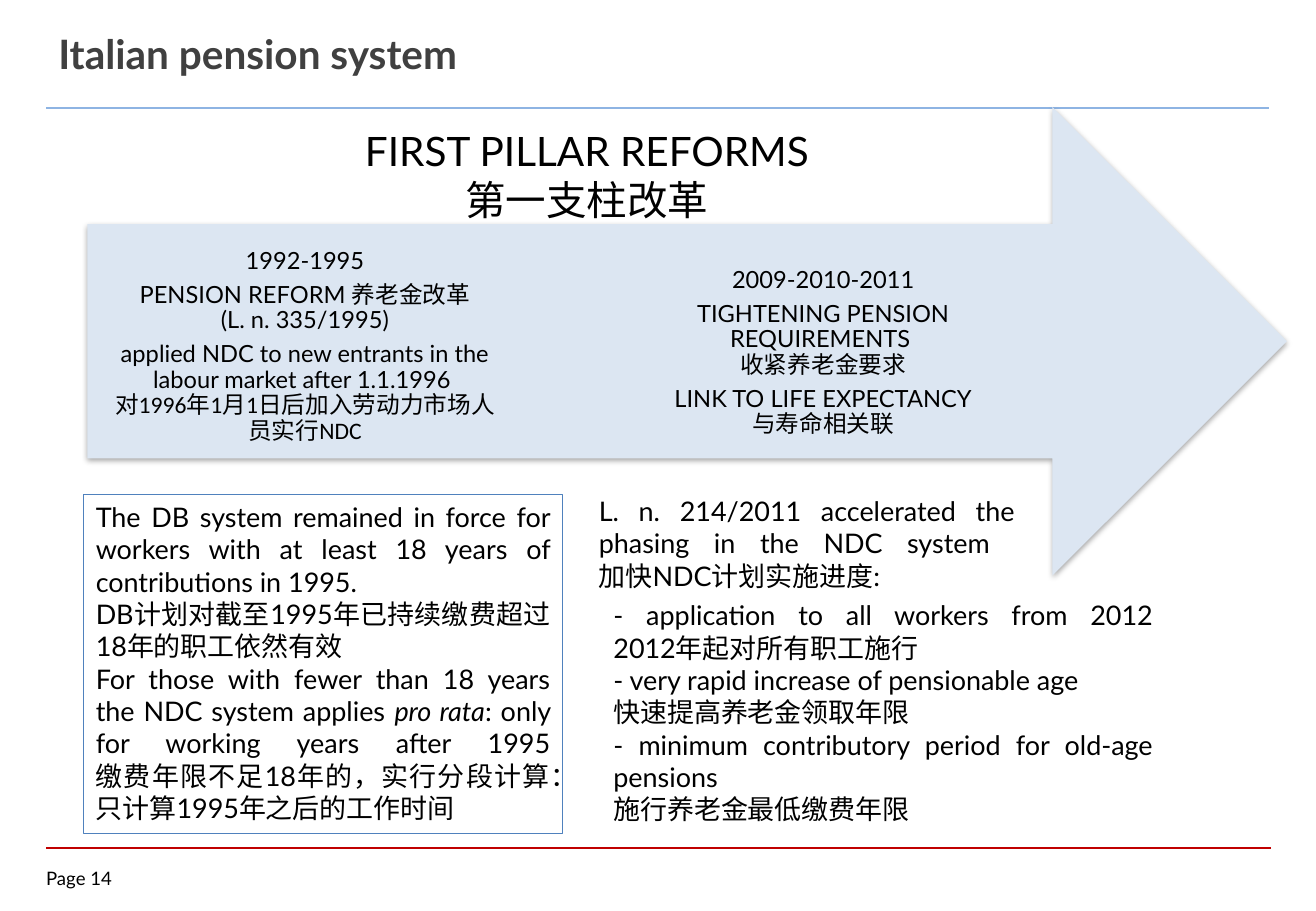
"""Build the Italian pension system slide."""
from copy import deepcopy
from lxml.etree import SubElement as Sub
from pptx import Presentation
from pptx.dml.color import RGBColor as Rgb
from pptx.enum.shapes import MSO_CONNECTOR as Link, MSO_SHAPE as Form
from pptx.enum.text import MSO_ANCHOR as Anchor, MSO_AUTO_SIZE as Fit, PP_ALIGN as Align
from pptx.oxml.ns import qn
from pptx.util import Inches, Pt

HUES = {"ink": "000000", "head": "404040", "sky": "8EB4E3", "red": "C00000",
        "pale": "DCE6F2", "edge": "4F81BD"}


def hue(name):
    """Return a named colour."""
    return Rgb.from_string(HUES[name])


def place(shape, x, y, w, h):
    """Set the box of a shape in inches."""
    shape.left, shape.top, shape.width, shape.height = map(Inches, (x, y, w, h))


def put(para, text, size=16, font="Lato", color="ink", bold=None, italic=None):
    """Add formatted text, with line breaks at newlines."""
    for i, line in enumerate(text.split("\n")):
        if i:
            para.add_line_break()
            para._p[-1].append(deepcopy(run._r.rPr))
        run = para.add_run()
        run.text = line
        face = run.font
        face.name, face.size, face.bold, face.italic = font, Pt(size), bold, italic
        face.color.rgb = hue(color)


def write(shape, paras, align=Align.LEFT, anchor=Anchor.TOP, pad=(0.1, 0.05),
          space=None, after=0, **style):
    """Fill a shape with paragraphs, each a string or a list of runs."""
    frame = shape.text_frame
    frame.word_wrap, frame.auto_size = True, Fit.NONE
    frame.vertical_anchor = anchor
    frame.margin_left = frame.margin_right = Inches(pad[0])
    frame.margin_top = frame.margin_bottom = Inches(pad[1])
    for i, runs in enumerate(paras):
        para = frame.add_paragraph() if i else frame.paragraphs[0]
        para.alignment, para.line_spacing = align, space
        para.space_before, para.space_after = Pt(0), Pt(after)
        for text, extra in [(runs, {})] if isinstance(runs, str) else runs:
            put(para, text, **{**style, **extra})


def label(slide, box, paras, **style):
    """Add a text box."""
    write(slide.shapes.add_textbox(*map(Inches, box)), paras, **style)


def rule(slide, x, y, w, color, width):
    """Draw a level line."""
    line = slide.shapes.add_connector(
        Link.STRAIGHT, Inches(x), Inches(y), Inches(x + w), Inches(y))
    line.line.color.rgb, line.line.width = hue(color), Pt(width)
    Sub(line._element.spPr, qn("a:effectLst"))


def shade(shape):
    """Give a shape a soft shadow below."""
    shape.shadow.inherit = False
    glow = Sub(shape._element.spPr.find(qn("a:effectLst")), qn("a:outerShdw"),
               blurRad="40000", dist="23000", dir="5400000", rotWithShape="0")
    tone = Sub(glow, qn("a:srgbClr"), val=HUES["ink"])
    Sub(tone, qn("a:alpha"), val="35000")


def border(slide, x, y, w, h):
    """Place the title, the two rules and the page number."""
    rule(slide, x, y + 6.79, w + 0.02, "red", 1)
    rule(slide, x, y + 0.7, w, "sky", 1.5)
    label(slide, (x, y + h - 0.22, 0.8, 0.22), ["Page 14"], pad=(0, 0), size=11)
    title = slide.shapes.title
    place(title, x, y, 7.56, 0.71)
    write(title, ["Italian pension system"], size=24, color="head", bold=True)


def reforms(slide, x, y, w, h):
    """Place the arrow with its heading and the two reform periods."""
    arrow = slide.shapes.add_shape(Form.RIGHT_ARROW, *map(Inches, (x, y, w, h)))
    arrow.fill.solid()
    arrow.fill.fore_color.rgb = hue("pale")
    arrow.line.fill.background()
    shade(arrow)
    step = dict(align=Align.CENTER, anchor=Anchor.MIDDLE, pad=(0, 0.16),
                space=0.9, after=5, size=14)
    label(slide, (x + 4.28, y + 1.02, 3.55, 2.01), [
        "2009-2010-2011",
        "TIGHTENING PENSION REQUIREMENTS \n收紧养老金要求",
        "LINK TO LIFE EXPECTANCY\n与寿命相关联"], **step)
    label(slide, (x + 0.15, y + 1.1, 3.28, 1.75), [
        "1992-1995",
        "PENSION REFORM 养老金改革\n(L. n. 335/1995)",
        [("applied NDC to new entrants in the labour market after 1.1.1996 \n", {}),
         ("对1996年1月1日后加入劳动力市场人员实行NDC", {"font": "Calibri"})]], **step)
    label(slide, (x + 1, y + 0.11, 6.22, 0.91), ["FIRST PILLAR REFORMS\n第一支柱改革"],
          align=Align.CENTER, size=24)


def past(slide, x, y, w, h):
    """Place the framed note on the earlier reform."""
    note = slide.shapes.add_shape(Form.RECTANGLE, *map(Inches, (x, y, w, h)))
    note.shadow.inherit = False
    note.fill.background()
    note.line.color.rgb, note.line.width = hue("edge"), Pt(0.75)
    write(note, [
        "The DB system remained in force for workers with at least 18 years "
        "of contributions in 1995.",
        "DB计划对截至1995年已持续缴费超过18年的职工依然有效",
        [("For those with fewer than 18 years the NDC system applies ", {}),
         ("pro rata", {"italic": True}),
         (": only for working years after 1995\n"
          "缴费年限不足18年的，实行分段计算：只计算1995年之后的工作时间", {})]],
        align=Align.JUSTIFY)


def recent(slide, x, y, w, h):
    """Place the note on the later reform and its points."""
    label(slide, (x, y, 3.62, 0.91), [
        "L. n. 214/2011 accelerated the phasing in the NDC system \n"
        "加快NDC计划实施进度:"], align=Align.JUSTIFY)
    label(slide, (x + 0.12, y + 0.86, w - 0.12, h - 0.86), [
        "- application to all workers from 2012\n2012年起对所有职工施行",
        "- very rapid increase of pensionable age ",
        "快速提高养老金领取年限",
        "- minimum contributory period for old-age pensions \n施行养老金最低缴费年限"],
        align=Align.JUSTIFY)


def main():
    """Build and save the slide."""
    deck = Presentation()
    deck.slide_width, deck.slide_height = Inches(10.83), Inches(7.5)
    slide = deck.slides.add_slide(deck.slide_layouts[5])
    border(slide, 0.38, 0.19, 10.06, 7.17)
    reforms(slide, 0.72, 0.88, 9.87, 3.86)
    past(slide, 0.69, 4.07, 3.94, 2.79)
    recent(slide, 4.83, 4.02, 4.76, 2.85)
    deck.save("out.pptx")


if __name__ == "__main__":
    main()
